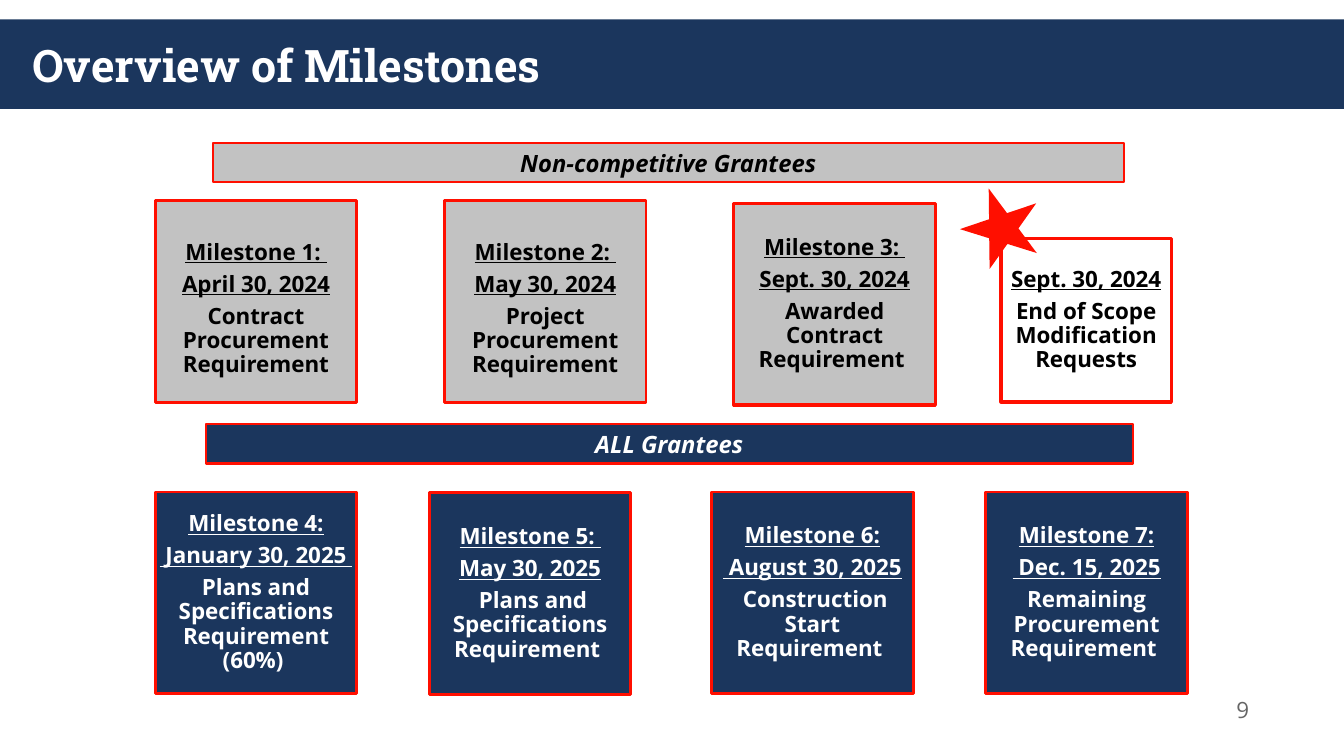
from pptx import Presentation
from pptx.dml.color import RGBColor
from pptx.enum.shapes import MSO_SHAPE
from pptx.enum.text import MSO_ANCHOR, PP_ALIGN
from pptx.util import Pt

COLORS = {
    "navy": "1B365D",
    "gray": "C2C2C2",
    "red": "FF0F00",
    "white": "FFFFFF",
    "black": "000000",
    "number": "666666",
}
BODY_FONT = "Open Sans"
TITLE_FONT = "Roboto Slab"
CARD_SIDE = 144
CARD_INSET = 0.72

# left, top, underlined heading lines, requirement
CONTRACT_CARDS = [
    (110.9, 143.3, ["Milestone 1: ", "April 30, 2024"], "Contract Procurement Requirement"),
    (317.5, 143.3, ["Milestone 2: ", "May 30, 2024"], "Project Procurement Requirement"),
]
AWARD_CARD = (524.2, 145.4, ["Milestone 3: ", "Sept. 30, 2024"], "Awarded Contract Requirement ")
SCOPE_CARD = (715, 170.6, ["Sept. 30, 2024"], "End of Scope Modification Requests")
ALL_GRANTEE_CARDS = [
    (110.9, 351.4, ["Milestone 4:", " January 30, 2025 "],
     "Plans and Specifications Requirement (60%) "),
    (306.7, 352.1, ["Milestone 5: ", "May 30, 2025"], " Plans and Specifications Requirement "),
    (508.3, 351.4, ["Milestone 6:", " August 30, 2025"], " Construction Start Requirement "),
    (704.2, 351.4, ["Milestone 7:", " Dec. 15, 2025"], "Remaining Procurement Requirement "),
]


def rgb(name):
    return RGBColor.from_string(COLORS[name])


def style_font(font, size, color, name=BODY_FONT, bold=True):
    font.name = name
    font.size = Pt(size)
    font.bold = bold
    font.color.rgb = rgb(color)


def add_block(slide, kind, left, top, width, height, fill, outline=None):
    """Add a flat filled shape, outlined in red when a line width is given."""
    block = slide.shapes.add_shape(kind, Pt(left), Pt(top), Pt(width), Pt(height))
    block.shadow.inherit = False
    block.fill.solid()
    block.fill.fore_color.rgb = rgb(fill)
    if outline:
        block.line.color.rgb = rgb("red")
        block.line.width = Pt(outline)
    else:
        block.line.fill.background()
    return block


def add_title(slide, text):
    band = add_block(slide, MSO_SHAPE.RECTANGLE, 0, 13.9, 960, 64, "navy")
    slide.shapes._spTree.insert(2, band._element)
    title = slide.shapes.title
    title.left, title.top, title.width, title.height = Pt(15.8), Pt(13.9), Pt(928), Pt(64.8)
    title.text_frame.text = text
    title.text_frame.vertical_anchor = MSO_ANCHOR.MIDDLE
    heading = title.text_frame.paragraphs[0]
    heading.alignment = PP_ALIGN.LEFT
    style_font(heading.font, 32, "white", TITLE_FONT)


def add_group_banner(slide, left, top, width, text, fill, color):
    banner = add_block(slide, MSO_SHAPE.RECTANGLE, left, top, width, 28, fill, 1.5)
    banner.text_frame.text = text
    label = banner.text_frame.paragraphs[0]
    label.alignment = PP_ALIGN.CENTER
    style_font(label.font, 17, color)
    label.font.italic = True


def add_card(slide, card, fill, color, width=CARD_SIDE, height=CARD_SIDE, outline=2):
    left, top, headings, requirement = card
    block = add_block(slide, MSO_SHAPE.RECTANGLE, left, top, width, height, fill, outline)
    frame = block.text_frame
    frame.word_wrap = True
    frame.vertical_anchor = MSO_ANCHOR.MIDDLE
    frame.margin_left = frame.margin_right = Pt(CARD_INSET)
    frame.margin_top = frame.margin_bottom = Pt(CARD_INSET)
    frame.text = "\n".join([*headings, requirement])
    for index, line in enumerate(frame.paragraphs):
        line.alignment = PP_ALIGN.CENTER
        line.line_spacing = 0.9
        line.space_after = Pt(5.6)
        style_font(line.font, 16, color)
        line.font.underline = index < len(headings)
    return block


def add_slide_number(slide, text):
    box = slide.shapes.add_textbox(Pt(863.6), Pt(492), Pt(48), Pt(30))
    box.text_frame.text = text
    box.text_frame.vertical_anchor = MSO_ANCHOR.MIDDLE
    box.text_frame.word_wrap = True
    number = box.text_frame.paragraphs[0]
    number.alignment = PP_ALIGN.CENTER
    style_font(number.font, 16, "number", bold=False)


def main():
    deck = Presentation()
    deck.slide_width, deck.slide_height = Pt(960), Pt(540)
    slide = deck.slides.add_slide(deck.slide_layouts[5])

    add_title(slide, "Overview of Milestones")
    add_slide_number(slide, "9")

    add_group_banner(slide, 151.9, 102.2, 651, "Non-competitive Grantees", "gray", "black")
    for card in CONTRACT_CARDS:
        frame = add_card(slide, card, "gray", "black").text_frame
        frame.vertical_anchor = MSO_ANCHOR.TOP
        frame.margin_top = Pt(28.8)
    add_card(slide, AWARD_CARD, "gray", "black", outline=2.25)
    add_card(slide, SCOPE_CARD, "white", "black", 121.7, 116.6, 2.25)

    add_group_banner(slide, 146.9, 303.1, 662.4, "ALL Grantees", "navy", "white")
    for card in ALL_GRANTEE_CARDS:
        add_card(slide, card, "navy", "white")

    star = add_block(slide, MSO_SHAPE.STAR_5_POINT, 686.2, 133.2, 57.6, 54.7, "red")
    star.rotation = 341.3

    deck.save("out.pptx")


if __name__ == "__main__":
    main()
